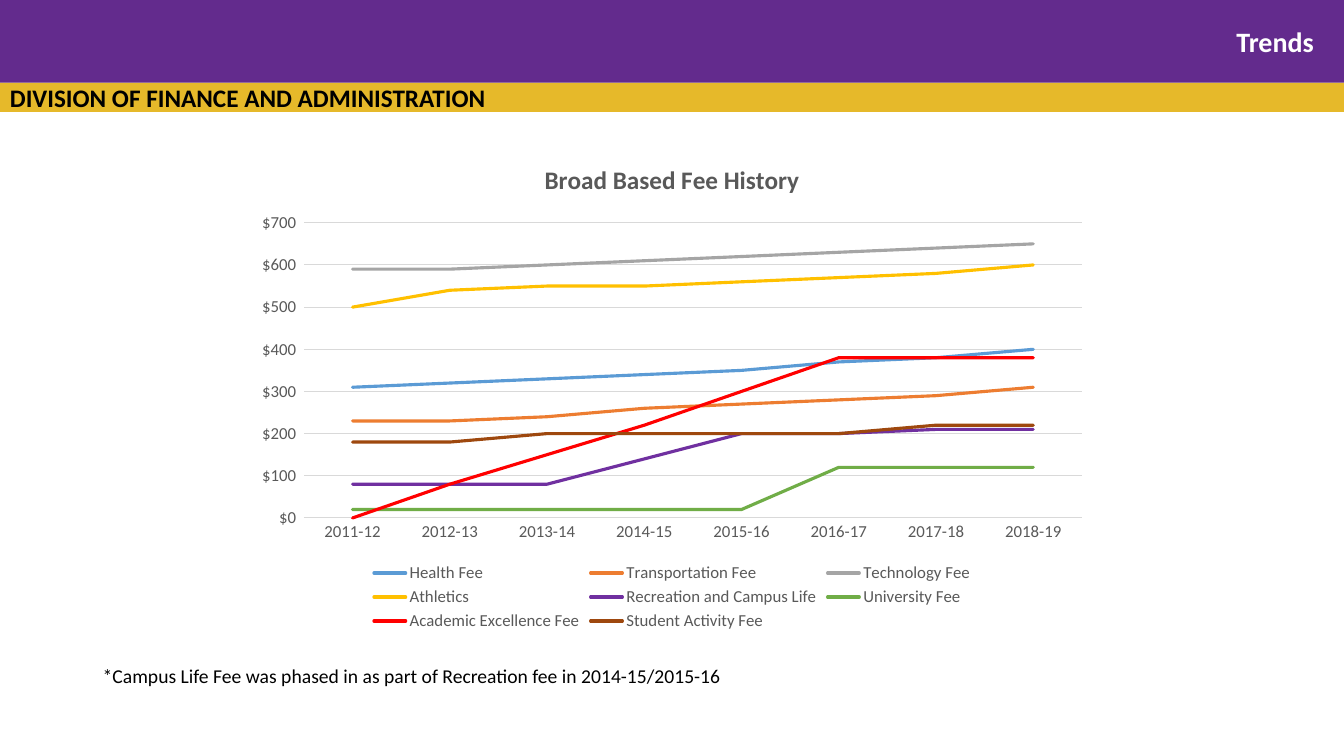
"""Build the broad based fee history slide."""
import pptx
import pptx.chart.data
import pptx.dml.color
import pptx.enum.chart
import pptx.enum.shapes
import pptx.enum.text
import pptx.util

Inches = pptx.util.Inches
FONT = "Calibri"
GRAY = "595959"
GRID = "D9D9D9"
DOLLARS = '"$"#,##0_);\\("$"#,##0\\)'
YEARS = [f"{year}-{year - 1999}" for year in range(2011, 2019)]
FEES = [
    ("Health Fee", "5B9BD5", [310, 320, 330, 340, 350, 370, 380, 400]),
    ("Transportation Fee", "ED7D31", [230, 230, 240, 260, 270, 280, 290, 310]),
    ("Technology Fee", "A5A5A5", [590, 590, 600, 610, 620, 630, 640, 650]),
    ("Athletics", "FFC000", [500, 540, 550, 550, 560, 570, 580, 600]),
    ("Recreation and Campus Life", "7030A0", [80, 80, 80, 140, 200, 200, 210, 210]),
    ("University Fee", "70AD47", [20, 20, 20, 20, 20, 120, 120, 120]),
    ("Academic Excellence Fee", "FF0000", [0, 80, 150, 220, 300, 380, 380, 380]),
    ("Student Activity Fee", "9E480E", [180, 180, 200, 200, 200, 200, 220, 220]),
]


def color(value):
    """Return an RGB color from a hex string."""
    return pptx.dml.color.RGBColor.from_string(value)


def style_font(font, size, value, bold=False):
    """Set the typeface, size, color and weight of a font."""
    font.name = FONT
    font.size = pptx.util.Pt(size)
    font.bold = bold
    font.color.rgb = color(value)


def style_line(line, value, width):
    """Set the color and width of a line."""
    line.color.rgb = color(value)
    line.width = pptx.util.Pt(width)


def write_text(shape, text, size, value, bold=False, align="LEFT"):
    """Put one formatted paragraph into a shape."""
    shape.text_frame.text = text
    paragraph = shape.text_frame.paragraphs[0]
    paragraph.alignment = getattr(pptx.enum.text.PP_ALIGN, align)
    style_font(paragraph.runs[0].font, size, value, bold)


def add_band(slide, top, height, fill):
    """Add a full-width colored band."""
    band = slide.shapes.add_shape(
        pptx.enum.shapes.MSO_SHAPE.RECTANGLE,
        0, Inches(top), Inches(13.33), Inches(height))
    band.shadow.inherit = False
    band.fill.solid()
    band.fill.fore_color.rgb = color(fill)
    band.line.fill.background()
    return band


def add_label(slide, left, top, width, height, text, **style):
    """Add a wrapping text box."""
    box = slide.shapes.add_textbox(
        Inches(left), Inches(top), Inches(width), Inches(height))
    box.text_frame.word_wrap = True
    box.text_frame.auto_size = pptx.enum.text.MSO_AUTO_SIZE.SHAPE_TO_FIT_TEXT
    write_text(box, text, **style)


def style_axes(chart):
    """Format the year axis and the dollar axis."""
    for axis in (chart.category_axis, chart.value_axis):
        axis.major_tick_mark = pptx.enum.chart.XL_TICK_MARK.NONE
        axis.minor_tick_mark = pptx.enum.chart.XL_TICK_MARK.NONE
        style_font(axis.tick_labels.font, 12, GRAY)
    style_line(chart.category_axis.format.line, GRID, 0.75)
    dollars = chart.value_axis
    dollars.minimum_scale = 0
    dollars.maximum_scale = 700
    dollars.major_unit = 100
    dollars.format.line.fill.background()
    style_line(dollars.major_gridlines.format.line, GRID, 0.75)
    dollars.tick_labels.number_format = DOLLARS
    dollars.tick_labels.number_format_is_linked = False


def style_series(chart):
    """Give each fee a plain colored line with round ends."""
    for series, (_, value, _) in zip(chart.plots[0].series, FEES):
        series.smooth = False
        series.marker.style = pptx.enum.chart.XL_MARKER_STYLE.NONE
        style_line(series.format.line, value, 2.25)
    for line in chart.element.xpath(".//c:ser/c:spPr/a:ln"):
        line.set("cap", "rnd")


def add_fee_chart(slide):
    """Add the line chart of fees by year."""
    data = pptx.chart.data.CategoryChartData(number_format=DOLLARS)
    data.categories = YEARS
    for name, _, values in FEES:
        data.add_series(name, values)
    chart = slide.shapes.add_chart(
        pptx.enum.chart.XL_CHART_TYPE.LINE, Inches(2.43), Inches(1.41),
        Inches(8.47), Inches(4.89), data).chart
    style_font(chart.font, 12, "000000")
    chart.has_title = True
    title = chart.chart_title
    title.include_in_layout = False
    write_text(title, "Broad Based Fee History", 18, GRAY, True, "CENTER")
    chart.has_legend = True
    chart.legend.position = pptx.enum.chart.XL_LEGEND_POSITION.BOTTOM
    chart.legend.include_in_layout = False
    style_font(chart.legend.font, 12, GRAY)
    style_axes(chart)
    chart.plots[0].vary_by_categories = False
    style_series(chart)


def main():
    """Build and save the slide."""
    presentation = pptx.Presentation()
    presentation.slide_width = Inches(13.33)
    presentation.slide_height = Inches(7.5)
    slide = presentation.slides.add_slide(presentation.slide_layouts[6])
    division = add_band(slide, 0.82, 0.29, "E6B92A")
    write_text(division, "DIVISION OF FINANCE AND ADMINISTRATION", 18, "000000", True)
    division.text_frame.word_wrap = False
    division.text_frame.vertical_anchor = pptx.enum.text.MSO_ANCHOR.MIDDLE
    add_band(slide, 0, 0.82, "632B8D")
    add_label(slide, 0.92, 6.54, 8.56, 0.34,
              "*Campus Life Fee was phased in as part of Recreation fee in 2014-15/2015-16",
              size=14, value="000000")
    add_label(slide, 9.13, 0.19, 4, 0.44, "Trends",
              size=20, value="FFFFFF", bold=True, align="RIGHT")
    add_fee_chart(slide)
    presentation.save("out.pptx")


if __name__ == "__main__":
    main()
